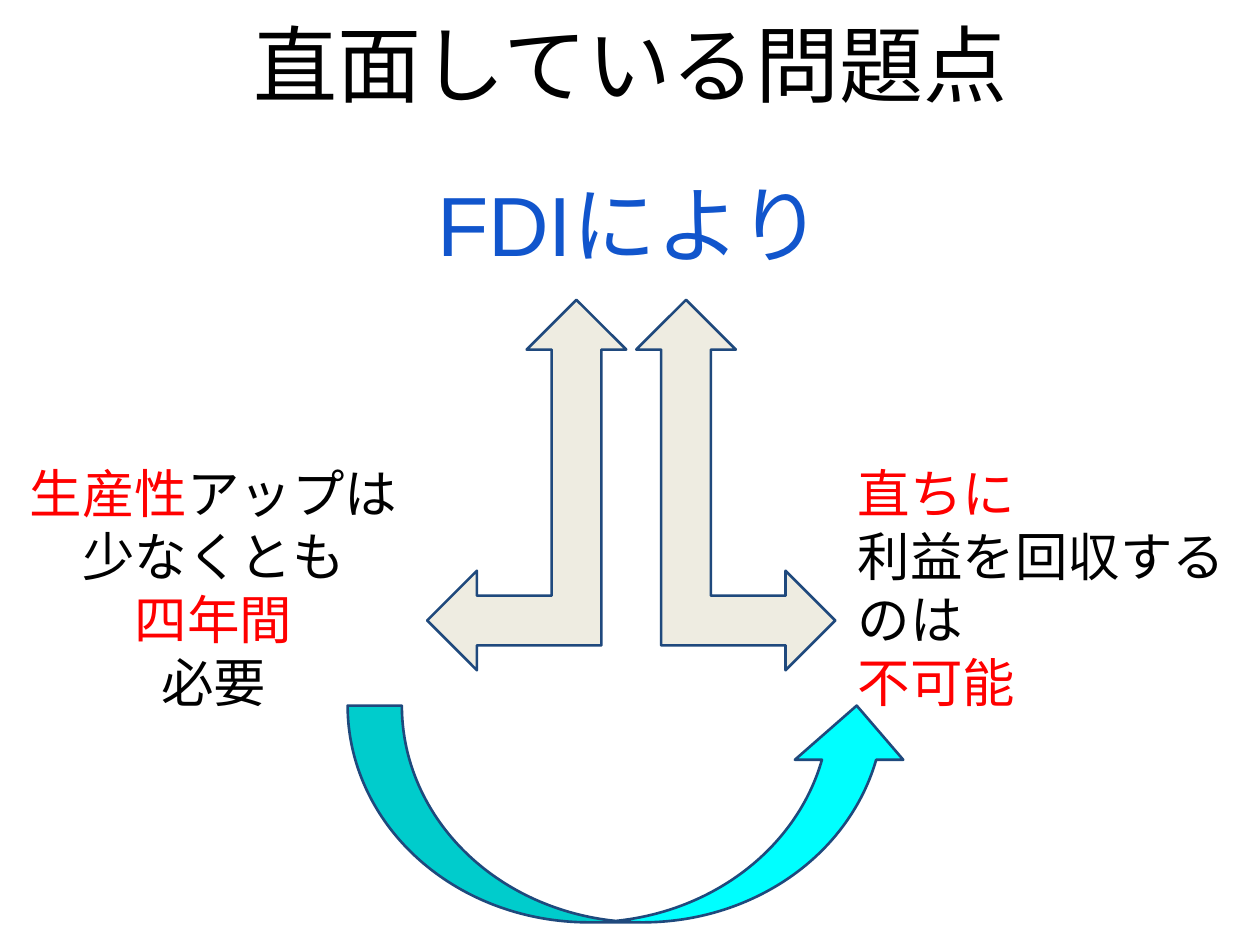
from pptx import Presentation
from pptx.dml.color import RGBColor
from pptx.enum.shapes import MSO_SHAPE
from pptx.enum.text import MSO_ANCHOR, MSO_AUTO_SIZE, PP_ALIGN
from pptx.util import Pt

EMU_PER_PX = 9144
TITLE_ONLY = 5
FONT = "Arial"
BLACK = RGBColor(0x00, 0x00, 0x00)
RED = RGBColor(0xFF, 0x00, 0x00)
BLUE = RGBColor(0x11, 0x55, 0xCC)
NAVY = RGBColor(0x1F, 0x49, 0x7D)
CREAM = RGBColor(0xEE, 0xEC, 0xE1)
CYAN = RGBColor(0x00, 0xFF, 0xFF)
LEFT, CENTER = PP_ALIGN.LEFT, PP_ALIGN.CENTER
TOP = MSO_ANCHOR.TOP
NO_AUTOFIT = MSO_AUTO_SIZE.NONE
LEFT_UP_ARROW = MSO_SHAPE.LEFT_UP_ARROW
CURVED_UP_ARROW = MSO_SHAPE.CURVED_UP_ARROW


def px(*lengths):
    return [length * EMU_PER_PX for length in lengths]


class SlideBuilder:
    def __init__(self, presentation):
        self.slide = presentation.slides.add_slide(presentation.slide_layouts[TITLE_ONLY])
        self.line_width = Pt(1.5)
        self.inset = px(10)[0]

    def fill_text(self, shape, lines, size, alignment):
        frame = shape.text_frame
        frame.word_wrap = True
        frame.auto_size = NO_AUTOFIT
        frame.vertical_anchor = TOP
        frame.margin_left = frame.margin_right = self.inset
        frame.margin_top = frame.margin_bottom = self.inset
        frame.text = "\n".join("" for _ in lines)
        for paragraph, parts in zip(frame.paragraphs, lines):
            paragraph.alignment = alignment
            for text, color in parts:
                run = paragraph.add_run()
                run.text = text
                run.font.name = FONT
                run.font.size = Pt(size)
                run.font.color.rgb = color

    def title(self, box, text, size):
        shape = self.slide.shapes.title
        shape.left, shape.top, shape.width, shape.height = px(*box)
        self.fill_text(shape, [[(text, BLACK)]], size, CENTER)

    def text(self, box, lines, size, alignment):
        shape = self.slide.shapes.add_textbox(*px(*box))
        self.fill_text(shape, lines, size, alignment)

    def arrow(self, preset, box, fill, flipped=False):
        shape = self.slide.shapes.add_shape(preset, *px(*box))
        shape.shadow.inherit = False
        shape.fill.solid()
        shape.fill.fore_color.rgb = fill
        shape.line.color.rgb = NAVY
        shape.line.width = self.line_width
        if flipped:
            shape._element.spPr.xfrm.set("flipH", "1")
        return shape


def main():
    presentation = Presentation()
    presentation.slide_width, presentation.slide_height = px(1000, 750)
    builder = SlideBuilder(presentation)

    builder.title((156, 0, 689, 99), "直面している問題点", 48)
    builder.text((300, 127, 400, 83), [[("FDIにより", BLUE)]], 48, CENTER)

    for left, flipped in ((339, False), (505, True)):
        builder.arrow(LEFT_UP_ARROW, (left, 238, 158, 294), CREAM, flipped)

    productivity = [
        [("生産性", RED), ("アップは", BLACK)],
        [("少なくとも", BLACK)],
        [("四年間", RED)],
        [("必要", BLACK)],
    ]
    recovery = [
        [("直ちに", RED)],
        [("利益を回収する", BLACK)],
        [("のは", BLACK)],
        [("不可能", RED)],
    ]
    builder.text((0, 356, 339, 233), productivity, 30, CENTER)
    builder.text((671, 356, 400, 233), recovery, 30, LEFT)

    curve = builder.arrow(CURVED_UP_ARROW, (276, 560, 447, 172), CYAN)
    for index, value in enumerate((0.25, 0.5, 0.25)):
        curve.adjustments[index] = value

    presentation.save("out.pptx")


if __name__ == "__main__":
    main()
